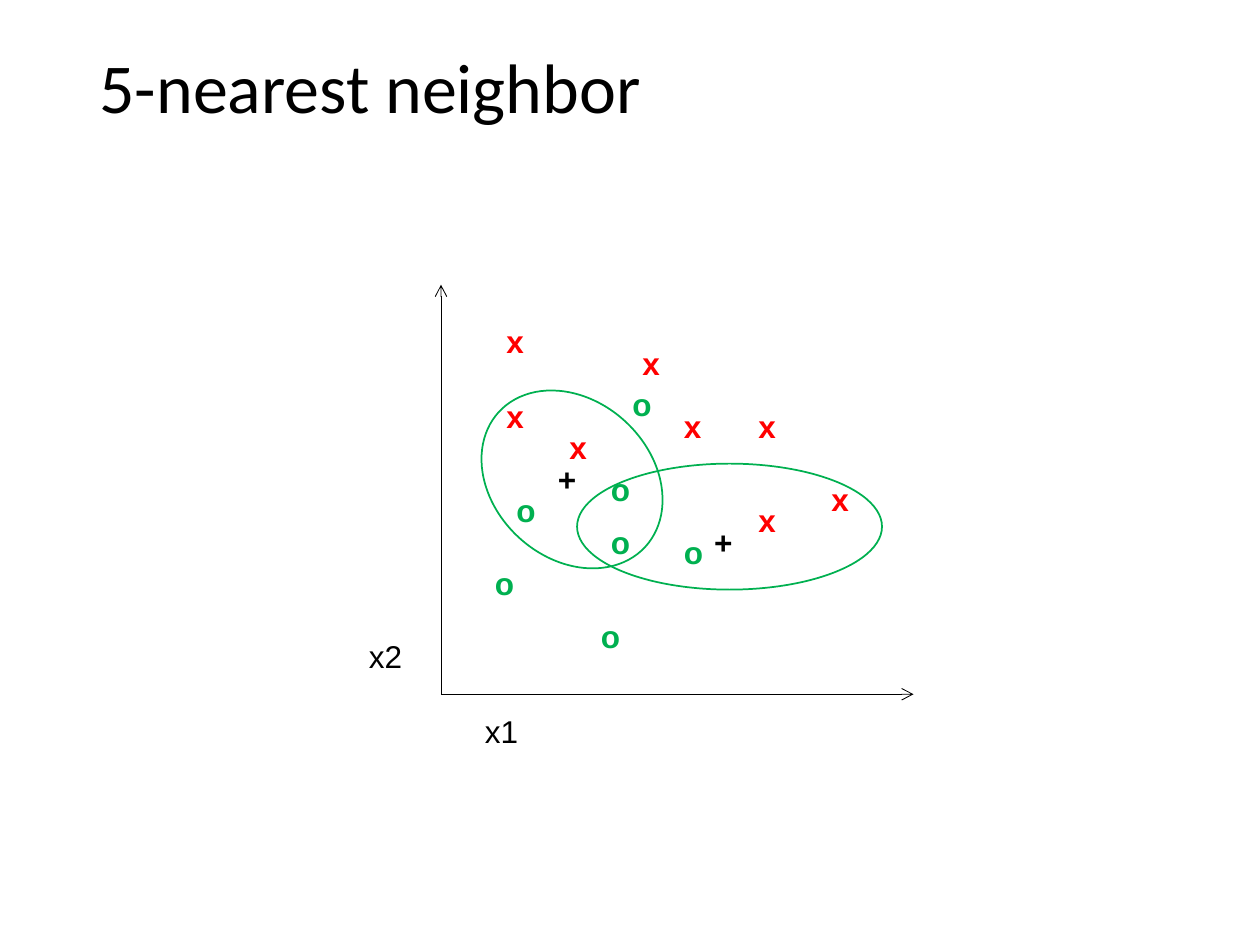
from pptx import Presentation
from pptx.dml.color import RGBColor as RGB
from pptx.enum.shapes import MSO_CONNECTOR as Link, MSO_SHAPE as Kind
from pptx.enum.text import MSO_ANCHOR as Anchor, MSO_AUTO_SIZE as Auto, PP_ALIGN as Align
from pptx.oxml.ns import qn
from pptx.util import Pt
from lxml.etree import SubElement as Sub

PX = 9144  # 100 px to the inch
COLORS = {"ink": "000000", "red": "FF0000", "green": "00B050"}

# Left and top of each mark, from the top left corner of the plot
CROSSES = [(183, 92), (242, 92), (242, 167), (300, 150),
           (42, 25), (42, 84), (150, 42), (92, 109)]
RINGS = [(142, 75), (183, 192), (33, 217), (50, 159),
         (117, 259), (125, 184), (125, 142)]
QUERIES = [(83, 134), (207, 184)]
# Left, top, width, height and turn of each neighborhood
HOODS = [(25, 92, 158, 125, 42.8), (108, 142, 242, 100, 0)]


def emu(*nums):
    return [n * PX for n in nums]


def paint(font, size, face, color):
    font.size, font.name = Pt(size), face
    font.color.rgb = RGB.from_string(COLORS[color])


def add_title(slide, box):
    title = slide.shapes.title
    title.left, title.top, title.width, title.height = emu(*box)
    frame = title.text_frame
    frame.text = "5-nearest neighbor"
    frame.vertical_anchor = Anchor.MIDDLE
    para = frame.paragraphs[0]
    para.alignment, para.line_spacing = Align.LEFT, 0.9
    paint(para.font, 40, "Calibri", "ink")


def add_text(shapes, text, x, y, wide, color="ink", bold=False):
    frame = shapes.add_textbox(*emu(x, y, wide, 40)).text_frame
    frame.word_wrap, frame.auto_size = False, Auto.SHAPE_TO_FIT_TEXT
    frame.text = text
    font = frame.paragraphs[0].font
    paint(font, 18, "Arial", color)
    font.bold = bold


def add_axis(shapes, x1, y1, x2, y2):
    axis = shapes.add_connector(Link.STRAIGHT, *emu(x1, y1, x2, y2))
    axis.line.width = Pt(0.5)
    axis.line.color.rgb = RGB.from_string(COLORS["ink"])
    Sub(axis.line._get_or_add_ln(), qn("a:tailEnd"), type="arrow")
    Sub(axis._element.spPr, qn("a:effectLst"))


def add_hood(shapes, x, y, wide, high, turn):
    oval = shapes.add_shape(Kind.OVAL, *emu(x, y, wide, high))
    oval.rotation = turn
    oval.shadow.inherit = False
    oval.fill.background()
    oval.line.width = Pt(1)
    oval.line.color.rgb = RGB.from_string(COLORS["green"])


def add_plot(slide, box):
    """Draw the axes and samples as a group, then queries and neighborhoods."""
    left, top, wide, high = box
    base = top + high
    group = slide.shapes.add_group_shape().shapes
    for shapes, text, size, color, spots in (
            (group, "x", 34, "red", CROSSES),
            (group, "o", 36, "green", RINGS),
            (slide.shapes, "+", 35, "ink", QUERIES)):
        for x, y in spots:
            add_text(shapes, text, left + x, top + y, size, color, True)
    add_axis(group, left, base, left, top)
    add_axis(group, left, base, left + wide, base)
    add_text(group, "x2", left - 67, base - 50, 47)
    add_text(group, "x1", left + 25, base + 9, 47)
    for x, y, *rest in HOODS:
        add_hood(slide.shapes, left + x, top + y, *rest)


def main():
    deck = Presentation()
    deck.slide_width, deck.slide_height = emu(1000, 750)
    slide = deck.slides.add_slide(deck.slide_layouts[5])
    add_title(slide, (69, 0, 862, 145))
    add_plot(slide, (350, 226, 375, 325))
    deck.save("out.pptx")


if __name__ == "__main__":
    main()
